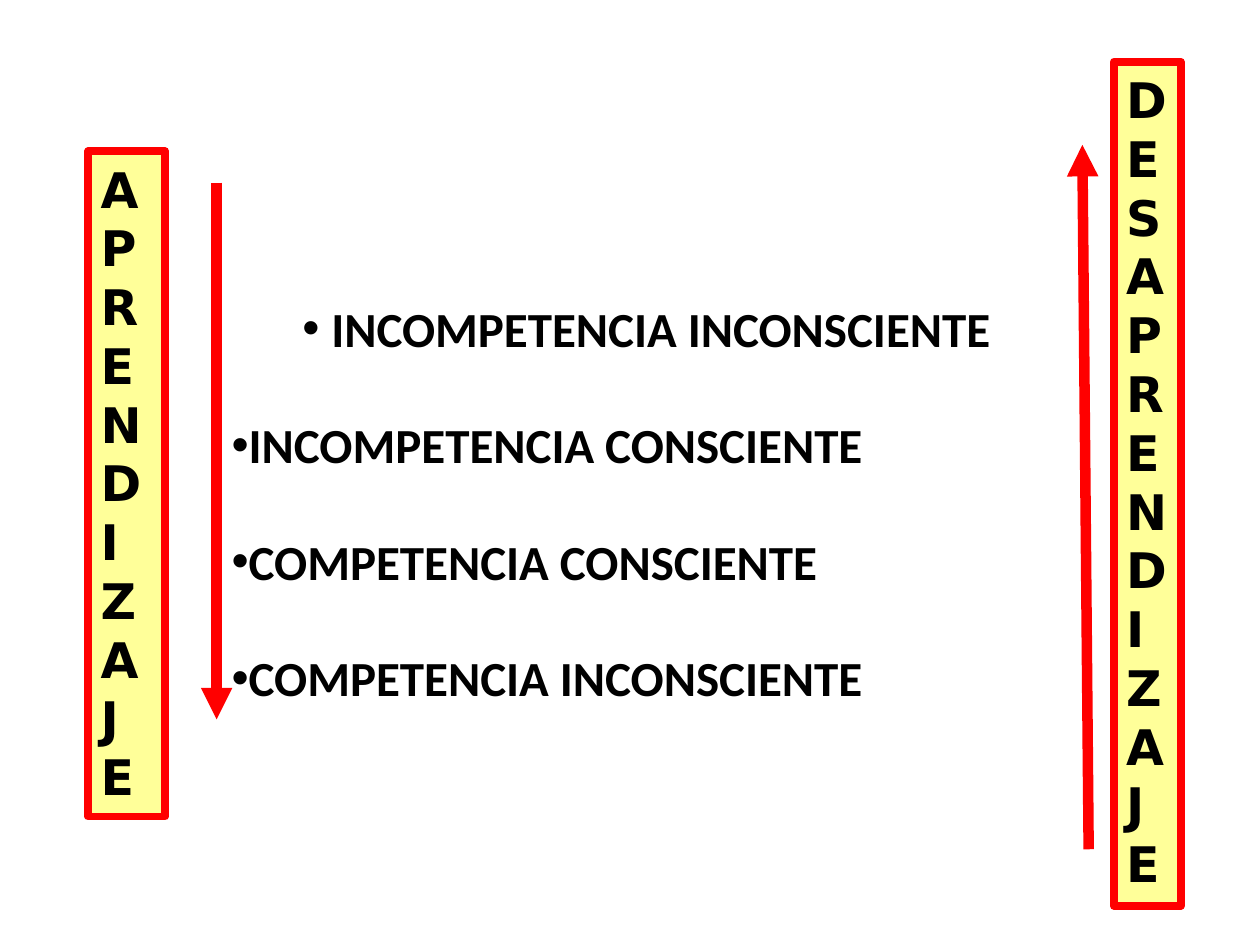
from lxml import etree
from pptx import Presentation
from pptx.dml.color import RGBColor
from pptx.enum.shapes import MSO_CONNECTOR, MSO_SHAPE
from pptx.enum.text import MSO_ANCHOR, PP_ALIGN
from pptx.oxml.ns import qn
from pptx.util import Pt

RECTANGLE = MSO_SHAPE.RECTANGLE
STRAIGHT = MSO_CONNECTOR.STRAIGHT
TOP = MSO_ANCHOR.TOP
LEFT, CENTER = PP_ALIGN.LEFT, PP_ALIGN.CENTER

COLORS = {"text": "000000", "panel": "FFFF99", "accent": "FF0000"}


def rgb(name):
    return RGBColor.from_string(COLORS[name])


class SlideBuilder:
    """Holds the style and the current page."""

    body_font = "Calibri"
    letter_font = "DejaVu Sans"
    size = 28
    letter_pitch = 33.6
    bullet_gap = 33

    def __init__(self, page):
        self.page = page

    def frame(self, box, top_inset):
        frame = box.text_frame
        frame.word_wrap = True
        frame.vertical_anchor = TOP
        frame.margin_left = frame.margin_right = Pt(7.2)
        frame.margin_top, frame.margin_bottom = Pt(top_inset), Pt(3.6)
        return frame

    def para(self, frame, index, text, font, align=LEFT):
        para = frame.paragraphs[0] if index == 0 else frame.add_paragraph()
        para.alignment = align
        span = para.add_run()
        span.text = text
        span.font.name = font
        span.font.size = Pt(self.size)
        span.font.bold = True
        span.font.color.rgb = rgb("text")
        return para

    def bullet(self, para, hanging=0, right=0):
        props = para._p.get_or_add_pPr()
        props.set("marL", str(Pt(hanging)))
        props.set("marR", str(Pt(right)))
        props.set("indent", str(-Pt(hanging)))
        etree.SubElement(props, qn("a:buFont")).set("typeface", "Arial")
        etree.SubElement(props, qn("a:buChar")).set("char", "•")

    def bullets(self, left, top, width, height, items):
        box = self.page.shapes.add_textbox(Pt(left), Pt(top), Pt(width), Pt(height))
        frame = self.frame(box, top_inset=28.6)
        for index, text in enumerate(items):
            first = index == 0
            para = self.para(frame, index, text, self.body_font, CENTER if first else LEFT)
            if first:
                self.bullet(para, hanging=16.6, right=7.4)
            else:
                para.space_before = Pt(self.bullet_gap)
                self.bullet(para)

    def letter_column(self, left, top, width, height, word):
        box = self.page.shapes.add_shape(RECTANGLE, Pt(left), Pt(top), Pt(width), Pt(height))
        box.shadow.inherit = False
        box.fill.solid()
        box.fill.fore_color.rgb = rgb("panel")
        box.line.color.rgb = rgb("accent")
        box.line.width = Pt(4.5)
        frame = self.frame(box, top_inset=4.5)
        for index, letter in enumerate(word):
            para = self.para(frame, index, letter, self.letter_font)
            para.line_spacing = Pt(self.letter_pitch)

    def arrow(self, x1, y1, x2, y2):
        arrow = self.page.shapes.add_connector(STRAIGHT, Pt(x1), Pt(y1), Pt(x2), Pt(y2))
        arrow.line.color.rgb = rgb("accent")
        arrow.line.width = Pt(6)
        etree.SubElement(arrow.line._get_or_add_ln(), qn("a:tailEnd")).set("type", "triangle")
        etree.SubElement(arrow._element.spPr, qn("a:effectLst"))


def main():
    deck = Presentation()
    deck.slide_width, deck.slide_height = Pt(720), Pt(540)
    builder = SlideBuilder(deck.slides.add_slide(deck.slide_layouts[6]))

    # Stages of competence
    builder.bullets(125.3, 141.8, 495.4, 269.3, [
        "INCOMPETENCIA INCONSCIENTE",
        "INCOMPETENCIA CONSCIENTE",
        "COMPETENCIA CONSCIENTE",
        "COMPETENCIA INCONSCIENTE",
    ])

    # Learning, downwards
    builder.letter_column(50.4, 86.4, 43.9, 380.2, "APRENDIZAJE")
    builder.arrow(123.8, 104.4, 123.8, 411.1)

    # Unlearning, upwards
    builder.letter_column(636.5, 35.3, 38.2, 482.4, "DESAPRENDIZAJE")
    builder.arrow(622.1, 485.3, 618.5, 82.8)

    deck.save("out.pptx")


if __name__ == "__main__":
    main()
